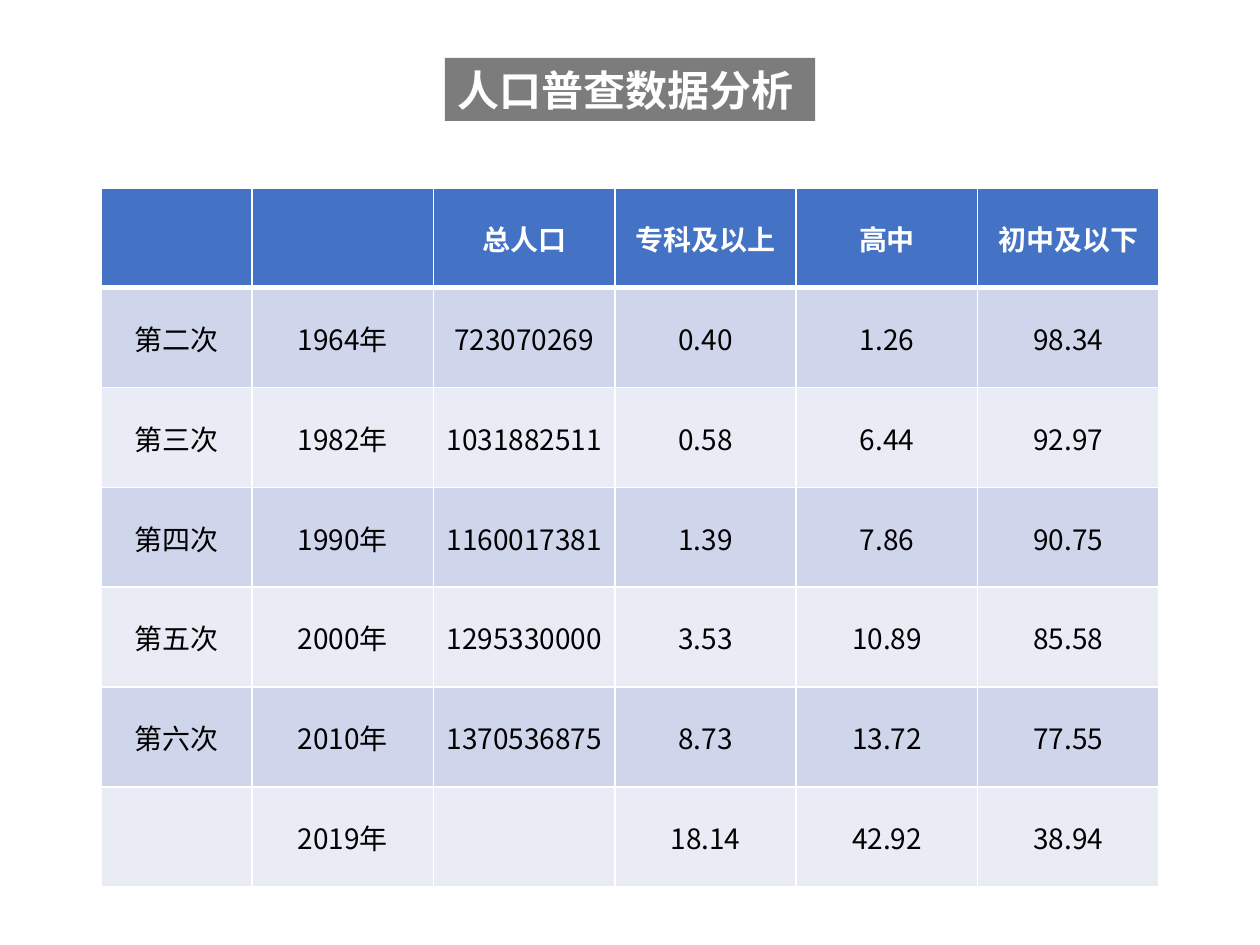
from pptx import Presentation
from pptx.dml.color import RGBColor
from pptx.enum import text
from pptx.oxml import parse_xml
from pptx.oxml.ns import nsdecls
from pptx.util import Inches, Pt

FONT = "Noto Sans CJK SC"
COLOURS = {
    "title": "7C7C7C",
    "header": "4472C4",
    "odd": "CFD5EA",
    "even": "E9EBF5",
    "light": "FFFFFF",
    "dark": "000000",
}
CENSUS = [
    ["", "", "总人口", "专科及以上", "高中", "初中及以下"],
    ["第二次", "1964年", "723070269", "0.40", "1.26", "98.34"],
    ["第三次", "1982年", "1031882511", "0.58", "6.44", "92.97"],
    ["第四次", "1990年", "1160017381", "1.39", "7.86", "90.75"],
    ["第五次", "2000年", "1295330000", "3.53", "10.89", "85.58"],
    ["第六次", "2010年", "1370536875", "8.73", "13.72", "77.55"],
    ["", "2019年", "", "18.14", "42.92", "38.94"],
]


def paint(fill, colour):
    fill.solid()
    fill.fore_color.rgb = RGBColor.from_string(COLOURS[colour])


def style_text(para, size, colour, bold, align):
    para.alignment = align
    font = para.font
    font.size, font.bold, font.name = Pt(size), bold, FONT
    paint(font.fill, colour)
    font._element.append(parse_xml(f'<a:ea {nsdecls("a")} typeface="{FONT}"/>'))


def add_borders(cell, widths):
    """Draw white borders; widths maps the sides L, R, T, B to points."""
    properties = cell._tc.get_or_add_tcPr()
    for index, (side, width) in enumerate(widths.items()):
        properties.insert(index, parse_xml(
            f'<a:ln{side} {nsdecls("a")} w="{Pt(width)}"><a:solidFill>'
            f'<a:srgbClr val="{COLOURS["light"]}"/></a:solidFill></a:ln{side}>'))


def place_title(page, left, top, width, height):
    title = page.shapes.title
    title.left, title.top, title.width, title.height = left, top, width, height
    paint(title.fill, "title")
    frame = title.text_frame
    frame.text = "人口普查数据分析"
    frame.word_wrap = True
    frame.auto_size = text.MSO_AUTO_SIZE.NONE
    frame.vertical_anchor = text.MSO_ANCHOR.MIDDLE
    style_text(frame.paragraphs[0], 24, "light", True, text.PP_ALIGN.LEFT)


def fill_cell(cell, words, row):
    header = row == 0
    paint(cell.fill, "header" if header else "odd" if row % 2 else "even")
    add_borders(cell, {"L": 1, "R": 1, "T": 3 if row == 1 else 1, "B": 3 if header else 1})
    cell.margin_left = cell.margin_right = cell.margin_top = Inches(0.01)
    cell.margin_bottom = 0
    cell.vertical_anchor = text.MSO_ANCHOR.MIDDLE
    cell.text = words
    style_text(cell.text_frame.paragraphs[0], 16, "light" if header else "dark",
               header, text.PP_ALIGN.CENTER)


def place_census_table(page, left, top, width, height):
    table = page.shapes.add_table(
        len(CENSUS), len(CENSUS[0]), left, top, width, height).table
    first, *others = table.columns
    first.width = Inches(1.2)
    for column in others:
        column.width = (width - first.width) // len(others)
    for row, record in enumerate(CENSUS):
        for column, words in enumerate(record):
            fill_cell(table.cell(row, column), words, row)


def main():
    deck = Presentation()
    deck.slide_width, deck.slide_height = Inches(10), Inches(7.5)
    page = deck.slides.add_slide(deck.slide_layouts[5])
    place_census_table(page, Inches(0.8), Inches(1.49), Inches(8.4), Inches(5.55))
    place_title(page, Inches(3.53), Inches(0.46), Inches(2.94), Inches(0.5))
    deck.save("out.pptx")


if __name__ == "__main__":
    main()
